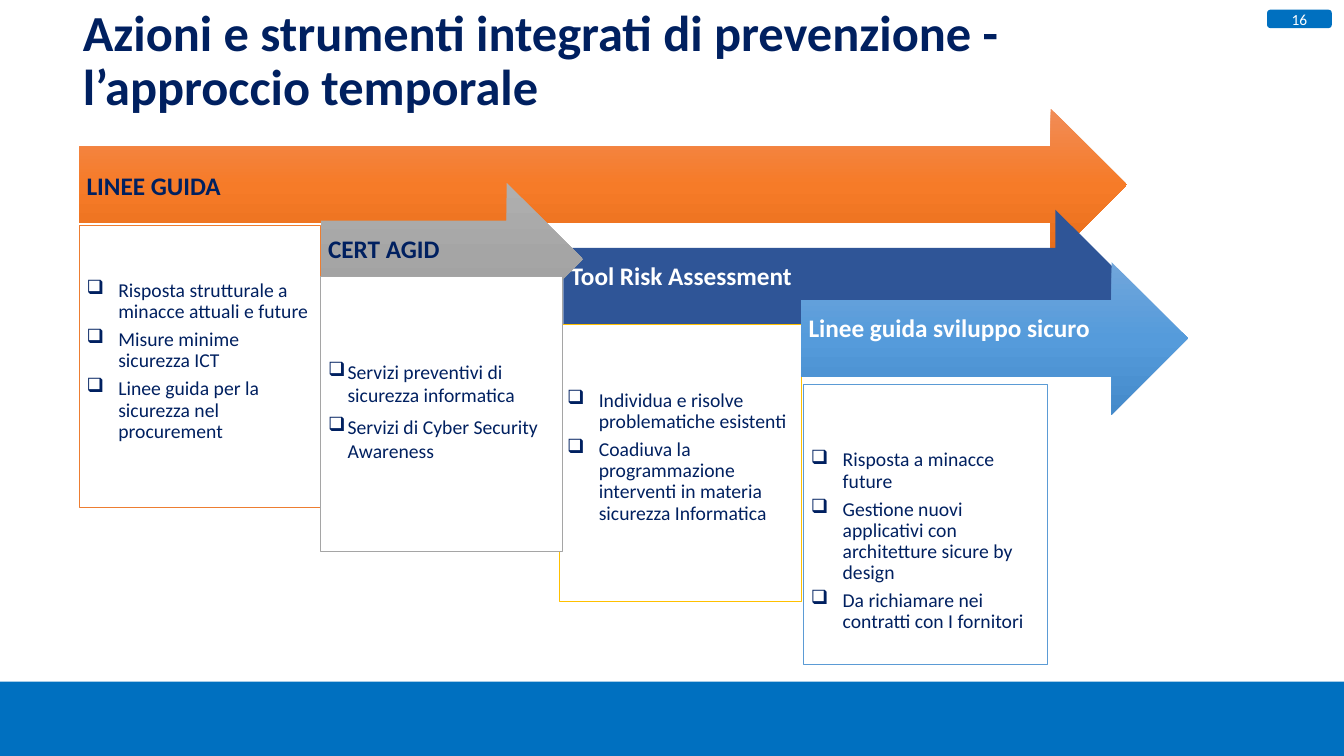
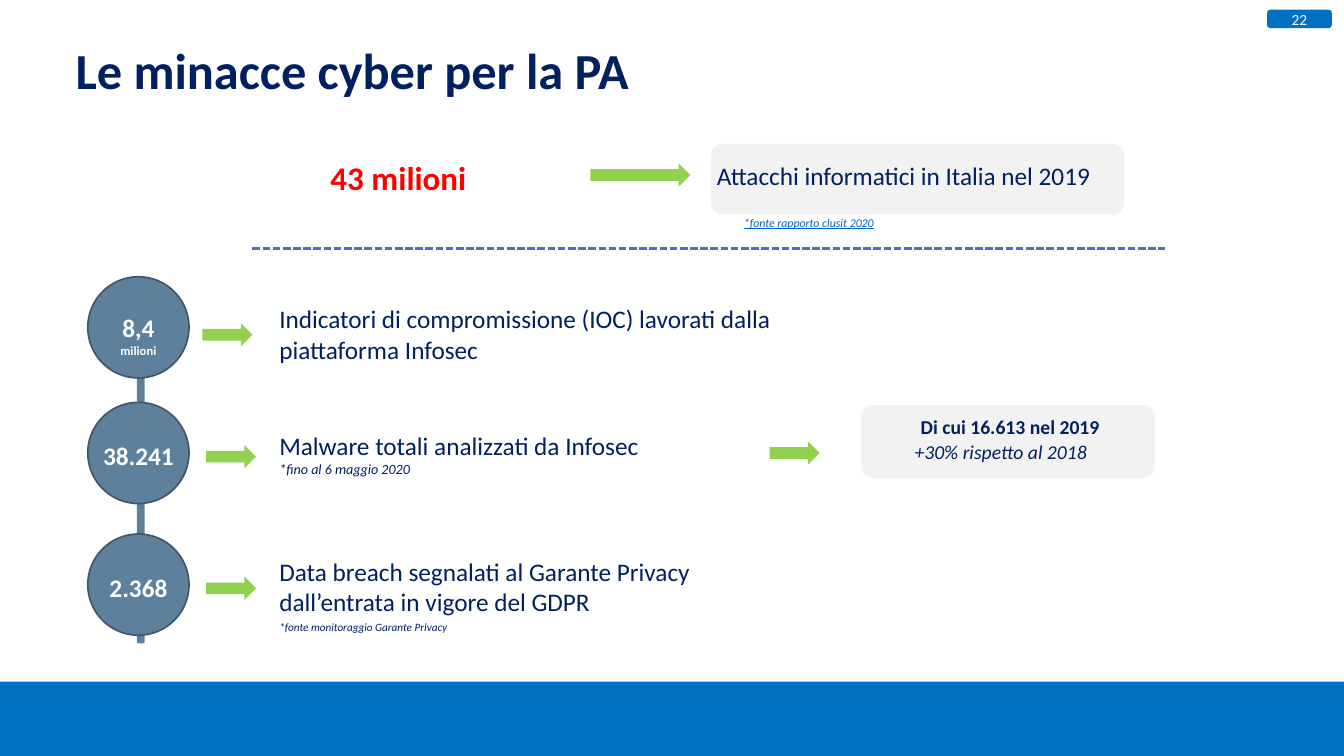
import copy
import pptx
import pptx.util
import pptx.dml.color
import pptx.enum.dml
import pptx.enum.shapes
import pptx.enum.text
import pptx.oxml.ns
from lxml import etree

Inches = pptx.util.Inches
Pt = pptx.util.Pt
hue = pptx.dml.color.RGBColor.from_string
qn = pptx.oxml.ns.qn
Kind = pptx.enum.shapes.MSO_SHAPE
Align = pptx.enum.text.PP_ALIGN
Anchor = pptx.enum.text.MSO_ANCHOR

FONT = "Calibri"
NAVY, BLUE, WHITE = "002060", "0070C0", "FFFFFF"
STEEL, GREEN, PALE = "5D819D", "92D050", "F2F2F2"


def draw(slide, kind, box, fill, line=None, width=1):
    """Add a preset shape; a list of fills makes a top-down gradient."""
    shape = slide.shapes.add_shape(kind, *[Inches(v) for v in box])
    shape.shadow.inherit = False
    if isinstance(fill, list):
        shape.fill.gradient()
        shape.fill.gradient_angle = 270
        stops = shape.element.find(".//" + qn("a:gsLst"))
        stops.append(copy.deepcopy(stops[-1]))
        for i, stop in enumerate(shape.fill.gradient_stops):
            stop.position = i / 2
            stop.color.rgb = hue(fill[i])
    else:
        shape.fill.solid()
        shape.fill.fore_color.rgb = hue(fill)
    if line:
        shape.line.color.rgb = hue(line)
        shape.line.width = Pt(width)
    else:
        shape.line.fill.background()
    return shape


def write(shape, text, size, color=NAVY, bold=False, pad=(0.09, 0.05, 0.09, 0.05),
          anchor=Anchor.TOP, align=Align.LEFT, space=1.0):
    """Fill a shape with text in one style; return its paragraphs."""
    frame = shape.text_frame
    frame.text = text
    frame.word_wrap = True
    frame.auto_size = pptx.enum.text.MSO_AUTO_SIZE.NONE
    frame.vertical_anchor = anchor
    (frame.margin_left, frame.margin_top,
     frame.margin_right, frame.margin_bottom) = [Inches(v) for v in pad]
    for para in frame.paragraphs:
        para.alignment = align
        para.line_spacing = space
        for run in para.runs:
            run.font.name = FONT
            run.font.size = Pt(size)
            run.font.bold = bold
            run.font.color.rgb = hue(color)
    return frame.paragraphs


deck = pptx.Presentation()
deck.slide_width, deck.slide_height = Inches(11.02), Inches(6.2)
layout = deck.slide_layouts[5]

# Title and page tag of each slide
heads = [
    ("Azioni e strumenti integrati di prevenzione - l’approccio temporale",
     (0.62, 0.12, 8.59, 0.78), 0.9, "16"),
    ("Le minacce cyber per la PA", (0.56, 0.27, 9.47, 0.6), 1.0, "22"),
]
slides = []
for text, box, space, page in heads:
    slide = deck.slides.add_slide(layout)
    title = slide.shapes.title
    title.left, title.top, title.width, title.height = [Inches(v) for v in box]
    write(title, text, 29.8, bold=True, pad=(0.06, 0.03, 0.06, 0.03),
          anchor=Anchor.MIDDLE, space=space)
    tag = draw(slide, Kind.ROUNDED_RECTANGLE, (10.39, 0.08, 0.53, 0.15), BLUE)
    write(tag, page, 9.1, WHITE, pad=(0.08, 0.04, 0.08, 0.04),
          anchor=Anchor.MIDDLE, align=Align.CENTER)
    slides.append(slide)
plan, threat = slides

# Bottom band, kept on the shared layout
band = draw(plan, Kind.RECTANGLE, (0, 5.59, 11.02, 0.62), BLUE)
layout.shapes.element.append(band.element)

# Timeline: arrow (label, left, top, width, fill, ink, bottom pad),
# then card (box, line, top pad, indent, line spacing, gap, points)
steps = [
    (("LINEE GUIDA", 0.65, 0.89, 8.59, ["F18C57", "F67B28", "E56C19"], NAVY, 0.02),
     ((0.65, 1.85, 1.98, 2.31), "ED7D31", 0.45, 0.26, 0.9, 4,
      ["Risposta strutturale a minacce attuali e future",
       "Misure minime sicurezza ICT",
       "Linee guida per la sicurezza nel procurement"])),
    (("Tool Risk Assessment", 4.62, 1.72, 4.66, "2F5597", WHITE, 0.2),
     ((4.59, 2.66, 1.98, 2.27), "FFC000", 0.54, 0.26, 0.9, 4,
      ["Individua e risolve problematiche esistenti",
       "Coadiuva la programmazione interventi in materia sicurezza Informatica"])),
    (("Linee guida sviluppo sicuro", 6.57, 2.15, 3.17,
      ["71A6DB", "559BDB", "448ACA"], WHITE, 0.2),
     ((6.59, 3.15, 2, 2.3), "5B9BD5", 0.54, 0.26, 0.9, 4,
      ["Risposta a minacce future",
       "Gestione nuovi applicativi con architetture sicure by design",
       "Da richiamare nei contratti con I fornitori"])),
    (("CERT AGID", 2.63, 1.5, 2.15, ["AFAFAF", "A5A5A5", "939393"], NAVY, 0.2),
     ((2.63, 2.27, 1.98, 2.25), "A5A5A5", 0.68, 0.16, 1.0, 5,
      ["Servizi preventivi di sicurezza informatica",
       "Servizi di Cyber Security Awareness"])),
]
for arrow, card in steps:
    label, left, top, width, fill, ink, low = arrow
    shape = draw(plan, Kind.RIGHT_ARROW, (left, top, width, 1.25), fill)
    write(shape, label, 14.9, ink, True, (0.06, 0.06, 0.23, low),
          Anchor.MIDDLE, space=0.9)

    box, line, drop, indent, space, gap, points = card
    shape = draw(plan, Kind.RECTANGLE, box, WHITE, line, 0.5)
    paras = write(shape, "\n".join(points), 11.6,
                  pad=(0.06, drop, 0.06, 0.06), space=space)
    for para in paras:
        para.space_after = Pt(gap)
    for node in shape.element.iter(qn("a:p")):
        props = node.get_or_add_pPr()
        props.set("marL", str(Inches(indent)))
        props.set("indent", str(-Inches(indent)))
        etree.SubElement(props, qn("a:buChar")).set("char", "❑")

# Headline figure
total = threat.shapes.add_textbox(Inches(2.62), Inches(1.24), Inches(1.9), Inches(0.43))
write(total, "43 milioni", 19.5, "FF0000", True)
draw(threat, Kind.RIGHT_ARROW, (4.84, 1.34, 0.82, 0.19), GREEN)
claim = draw(threat, Kind.ROUNDED_RECTANGLE, (5.83, 1.18, 3.39, 0.58), PALE)
write(claim, "Attacchi informatici in Italia nel 2019", 14.9,
      pad=(0.02, 0, 0, 0.07), anchor=Anchor.MIDDLE)
source = threat.shapes.add_textbox(Inches(6.01), Inches(1.72), Inches(1.51), Inches(0.23))
font = write(source, "*fonte rapporto clusit 2020", 7, "0563C1")[0].runs[0].font
font.italic = font.underline = True

# Dashed divider
rule = threat.shapes.add_connector(
    pptx.enum.shapes.MSO_CONNECTOR.STRAIGHT,
    Inches(2.07), Inches(2.04), Inches(9.55), Inches(2.04))
rule.line.color.rgb = hue("4472C4")
rule.line.width = Pt(1.5)
rule.line.dash_style = pptx.enum.dml.MSO_LINE.SQUARE_DOT
etree.SubElement(rule.element.spPr, qn("a:effectLst"))

# Chain of figures: circle top, figure, top pad, arrow place, text top, text, note
draw(threat, Kind.ROUNDED_RECTANGLE, (1.13, 2.35, 0.05, 2.92), STEEL, STEEL)
rows = [
    (2.27, "8,4\nmilioni", 0.13, (1.66, 2.65), 2.44,
     "Indicatori di compromissione (IOC) lavorati dalla piattaforma Infosec", None),
    (3.3, "38.241", 0.04, (1.69, 3.65), 3.48,
     "Malware totali analizzati da Infosec", ("*fino al 6 maggio 2020", 8.3, 0)),
    (4.38, "2.368", 0.04, (1.69, 4.73), 4.51,
     "Data breach segnalati al Garante Privacy dall’entrata in vigore del GDPR",
     ("*fonte monitoraggio Garante Privacy", 6.6, 2)),
]
for top, figure, drop, spot, head, text, note in rows:
    disc = draw(threat, Kind.OVAL, (0.72, top, 0.83, 0.83), STEEL, "44546A")
    paras = write(disc, figure, 14.9, WHITE, True, (0, drop, 0, 0),
                  Anchor.MIDDLE, Align.CENTER)
    disc.text_frame.word_wrap = False
    for para in paras[1:]:
        para.runs[0].font.size = Pt(7.4)
    draw(threat, Kind.RIGHT_ARROW, (*spot, 0.41, 0.19), GREEN)
    item = threat.shapes.add_textbox(Inches(2.2), Inches(head), Inches(4.28), Inches(0.6))
    if note:
        words, size, gap = note
        last = write(item, text + "\n" + words, 14.9)[1]
        last.space_before = Pt(gap)
        last.runs[0].font.size = Pt(size)
        last.runs[0].font.italic = True
    else:
        write(item, text, 14.9)

# Detail on the malware count
draw(threat, Kind.RIGHT_ARROW, (6.31, 3.62, 0.41, 0.19), GREEN)
share = draw(threat, Kind.ROUNDED_RECTANGLE, (7.06, 3.32, 2.41, 0.6), PALE)
first, second = write(share, "Di cui 16.613 nel 2019\n+30% rispetto al 2018", 11.6,
                      pad=(0.41, 0, 0, 0.03), anchor=Anchor.MIDDLE)
first.runs[0].font.bold = True
second.runs[0].font.italic = True
second.space_before = Pt(1)
for node in list(share.element.iter(qn("a:p")))[:1]:
    node.get_or_add_pPr().set("marL", str(Inches(0.05)))

deck.save("out.pptx")
